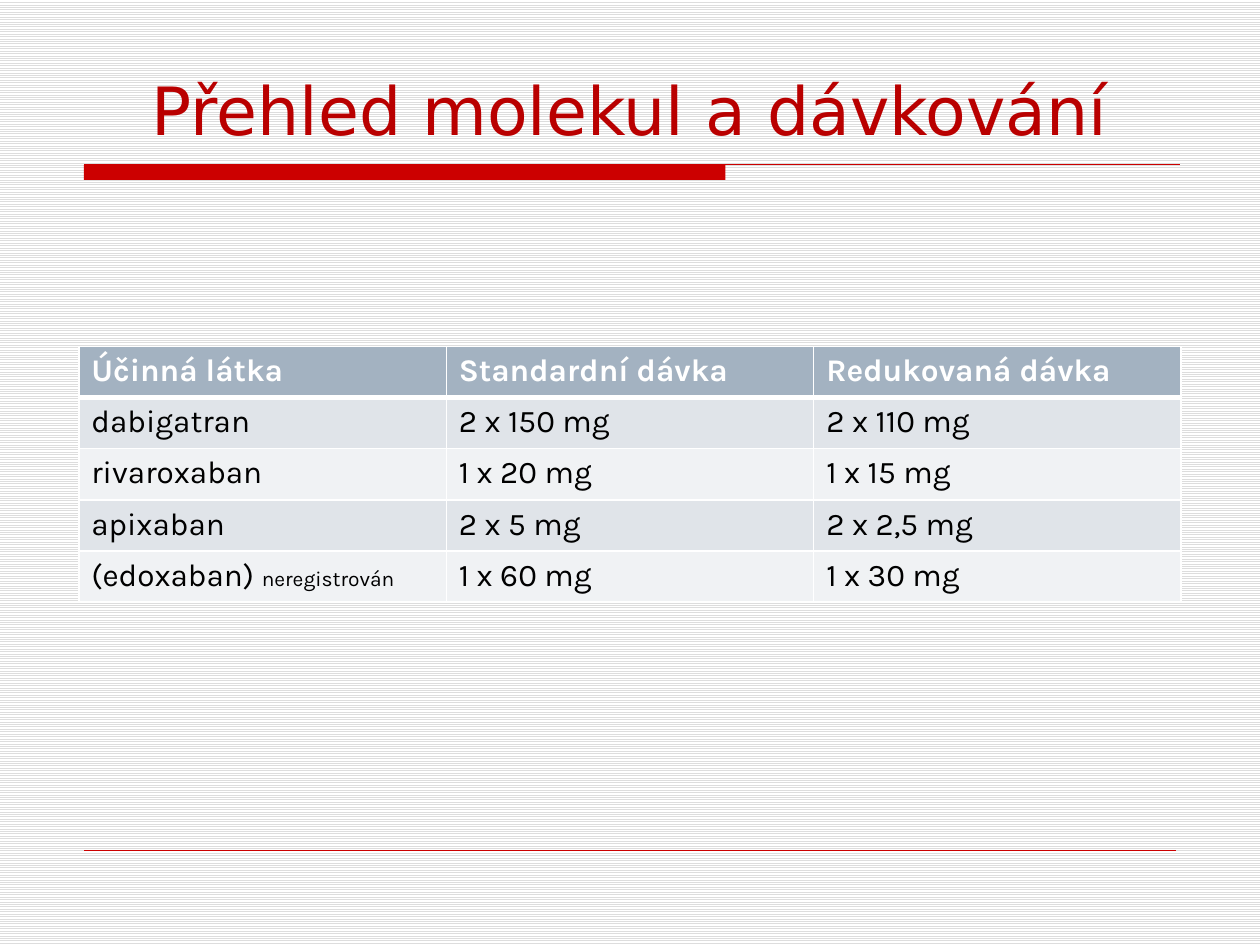
from pptx import Presentation
from pptx.dml.color import RGBColor
from pptx.enum.dml import MSO_PATTERN
from pptx.enum.shapes import MSO_CONNECTOR, MSO_SHAPE
from pptx.enum.text import MSO_ANCHOR, PP_ALIGN
from pptx.oxml.ns import qn
from pptx.util import Pt
from lxml.etree import SubElement

RED = RGBColor(0xCC, 0x00, 0x00)
TITLE_RED = RGBColor(0xB9, 0x00, 0x00)
WHITE = RGBColor(0xFF, 0xFF, 0xFF)
BLACK = RGBColor(0x00, 0x00, 0x00)
STRIPE = RGBColor(0xDD, 0xDD, 0xDD)
HEADER_FILL = RGBColor(0xA3, 0xB2, 0xC1)
BAND_FILLS = (RGBColor(0xE0, 0xE4, 0xE9), RGBColor(0xF0, 0xF2, 0xF4))

DOSES = (
    (("Účinná látka",), ("Standardní dávka",), ("Redukovaná dávka",)),
    (("dabigatran",), ("2 x 150 mg",), ("2 x 110 mg",)),
    (("rivaroxaban",), ("1 x 20 mg",), ("1 x 15 mg",)),
    (("apixaban",), ("2 x 5 mg",), ("2 x 2,5 mg",)),
    (("(edoxaban) ", "neregistrován"), ("1 x 60 mg",), ("1 x 30 mg",)),
)
RUN_SIZES = (18, 12)


def paint_background(slide):
    fill = slide.background.fill
    fill.patterned()
    fill.pattern = MSO_PATTERN.LIGHT_HORIZONTAL
    fill.fore_color.rgb = STRIPE
    fill.back_color.rgb = WHITE


def add_rule(slide, left, top, width, weight):
    rule = slide.shapes.add_connector(
        MSO_CONNECTOR.STRAIGHT, Pt(left), Pt(top), Pt(left + width), Pt(top))
    rule.line.color.rgb = RED
    rule.line.width = Pt(weight)
    SubElement(rule._element.spPr, qn("a:effectLst"))


def add_title_rule(slide, left, top, width, height):
    bar = slide.shapes.add_shape(
        MSO_SHAPE.RECTANGLE, Pt(left), Pt(top), Pt(width * 0.585), Pt(height))
    bar.shadow.inherit = False
    bar.fill.solid()
    bar.fill.fore_color.rgb = RED
    bar.line.fill.background()
    add_rule(slide, left, top, width, 0.75)


def add_title(slide, left, top, width, height):
    title = slide.shapes.add_textbox(Pt(left), Pt(top), Pt(width), Pt(height))
    text_frame = title.text_frame
    text_frame.word_wrap = True
    text_frame.vertical_anchor = MSO_ANCHOR.BOTTOM
    text_frame.text = "Přehled molekul a dávkování"
    paragraph = text_frame.paragraphs[0]
    paragraph.alignment = PP_ALIGN.CENTER
    font = paragraph.runs[0].font
    font.name = "DejaVu Sans"
    font.size = Pt(38)
    font.color.rgb = TITLE_RED


def set_borders(cell, top_weight, bottom_weight):
    properties = cell._tc.get_or_add_tcPr()
    weights = {"L": 1, "R": 1, "T": top_weight, "B": bottom_weight}
    for side, weight in weights.items():
        border = SubElement(properties, qn(f"a:ln{side}"), w=str(Pt(weight)))
        solid = SubElement(border, qn("a:solidFill"))
        SubElement(solid, qn("a:srgbClr"), val=str(WHITE))


def fill_cell(cell, texts, row):
    header = row == 0
    set_borders(cell, 3 if row == 1 else 1, 3 if header else 1)
    cell.fill.solid()
    cell.fill.fore_color.rgb = HEADER_FILL if header else BAND_FILLS[(row - 1) % 2]
    paragraph = cell.text_frame.paragraphs[0]
    for text, size in zip(texts, RUN_SIZES):
        run = paragraph.add_run()
        run.text = text
        run.font.name = "Karla"
        run.font.size = Pt(size)
        run.font.bold = header
        run.font.color.rgb = WHITE if header else BLACK


def add_dose_table(slide, left, top, width, height):
    table = slide.shapes.add_table(
        len(DOSES), len(DOSES[0]), Pt(left), Pt(top), Pt(width), Pt(height)).table
    for row, entries in enumerate(DOSES):
        table.rows[row].height = Pt(height / len(DOSES))
        for column, texts in enumerate(entries):
            fill_cell(table.cell(row, column), texts, row)


def main():
    presentation = Presentation()
    presentation.slide_width = Pt(720)
    presentation.slide_height = Pt(540)
    slide = presentation.slides.add_slide(presentation.slide_layouts[6])
    paint_background(slide)
    add_title_rule(slide, 48, 94.2, 626.5, 8.6)
    add_rule(slide, 48, 486, 624, 0.25)
    add_title(slide, 45, 24, 630, 64.5)
    add_dose_table(slide, 45, 198, 630, 146)
    presentation.save("out.pptx")


if __name__ == "__main__":
    main()
